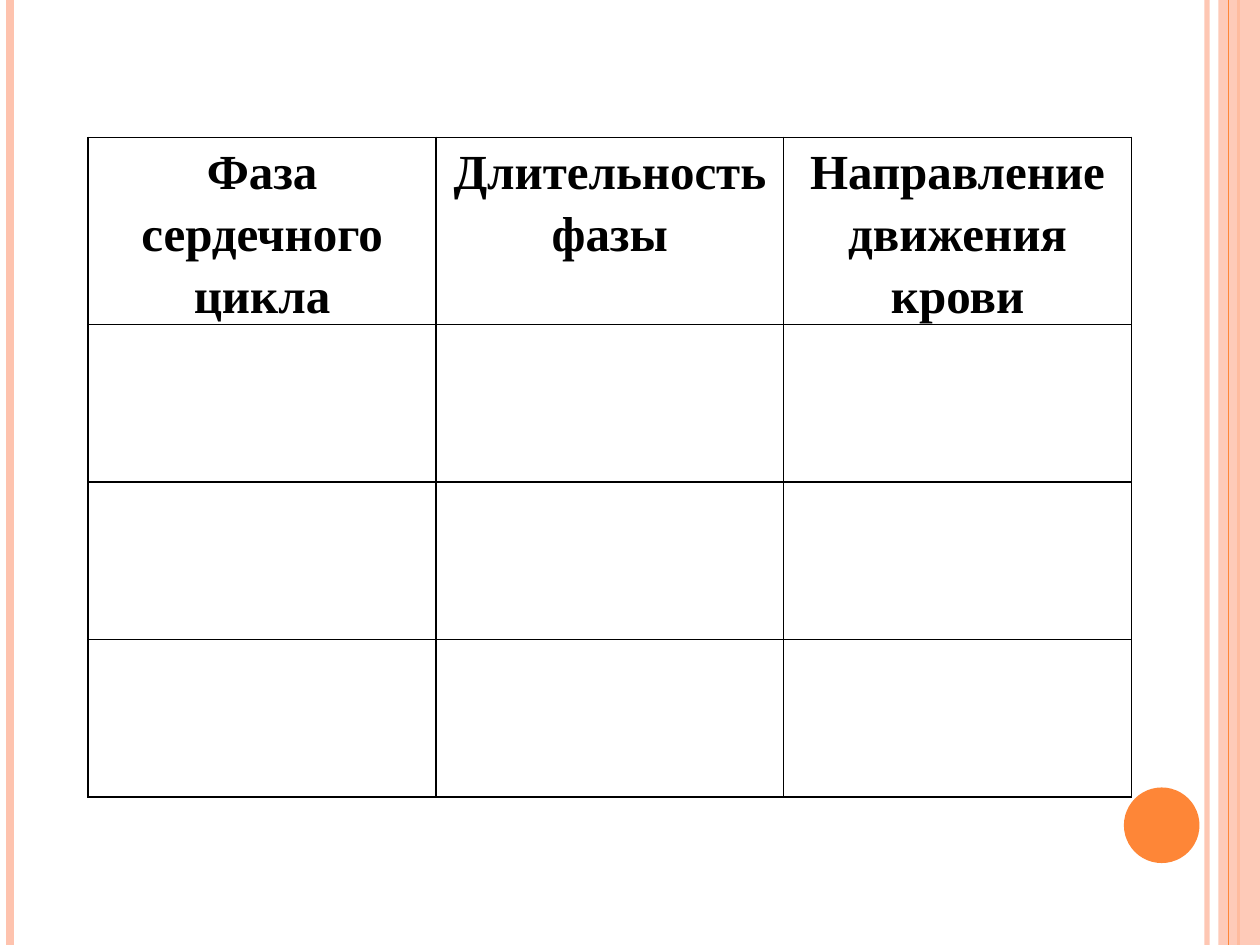
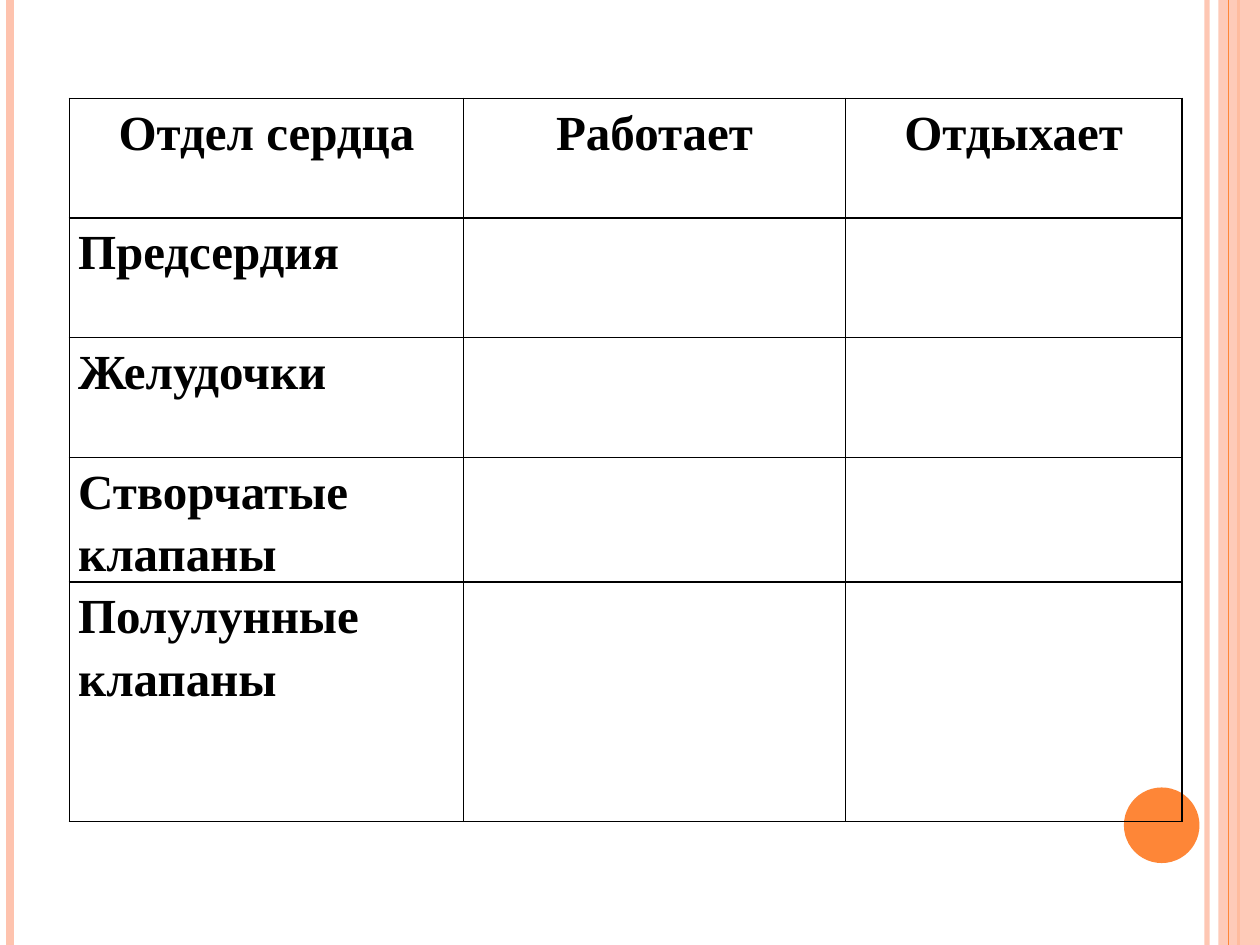
from dataclasses import dataclass

from lxml.etree import SubElement as Sub
from pptx import Presentation
from pptx.dml.color import RGBColor as RGB
from pptx.enum.shapes import MSO_CONNECTOR as Link, MSO_SHAPE as Kind
from pptx.enum.text import PP_ALIGN as Align
from pptx.oxml import parse_xml
from pptx.oxml.ns import nsdecls, qn
from pptx.util import Inches, Pt


@dataclass(frozen=True)
class Theme:
    peach: str = "FEC3AE"
    orange: str = "FE8637"
    ink: str = "000000"
    paper: str = "FFFFFF"
    face: str = "Times New Roman"
    size: int = 28
    space: float = 1.15
    rule: int = 1
    inset: float = 0.07


THEME = Theme()
PAGE = (0, 0, 10, 7.5)


def apply(item, style):
    for name, value in style.items():
        setattr(item, name, value)


def fade(part, alpha):
    """Set the opacity, in percent, of the colour inside part."""
    tint = next(part.iter(qn("a:srgbClr")))
    Sub(tint, qn("a:alpha"), val=str(alpha * 1000))


def stripe(slide, box, gap, color, width, alpha=100):
    """Upright line, gap inches from the left of the box."""
    left, top, _, high = box
    x = Inches(left + gap)
    line = slide.shapes.add_connector(
        Link.STRAIGHT, x, Inches(top), x, Inches(top + high))
    line.line.color.rgb = RGB.from_string(color)
    line.line.width = Pt(width)
    if alpha < 100:
        fade(line.line._ln, alpha)
    Sub(line._element.spPr, qn("a:effectLst"))


def solid(slide, kind, box, color, alpha=100):
    shape = slide.shapes.add_shape(kind, *map(Inches, box))
    shape.shadow.inherit = False
    shape.fill.solid()
    shape.fill.fore_color.rgb = RGB.from_string(color)
    shape.line.fill.background()
    if alpha < 100:
        fade(shape._element.spPr, alpha)


def frame(slide, box):
    """Side stripes, right band and round badge."""
    left, top, wide, high = box
    right, base = left + wide, top + high
    stripe(slide, box, wide - 0.42, THEME.peach, 3, 93)
    stripe(slide, box, 0.08, THEME.peach, 4.5)
    stripe(slide, box, wide - 0.17, THEME.orange, 1.5)
    solid(slide, Kind.RECTANGLE, (right - 0.33, top, 0.33, high),
          THEME.peach, 87)
    stripe(slide, box, wide - 0.25, THEME.orange, 0.75)
    solid(slide, Kind.OVAL, (right - 1.08, base - 1.25, 0.6, 0.6),
          THEME.orange)


def border(cell):
    """Thin line on all four sides of the cell."""
    props = cell._tc.get_or_add_tcPr()
    for spot, side in enumerate("LRTB"):
        props.insert(spot, parse_xml(
            f'<a:ln{side} {nsdecls("a")} w="{Pt(THEME.rule)}">'
            f'<a:solidFill><a:srgbClr val="{THEME.ink}"/></a:solidFill>'
            f'</a:ln{side}>'))


def write(cell, text, align):
    cell.text = text
    for para in cell.text_frame.paragraphs:
        apply(para, {"alignment": align, "line_spacing": THEME.space})
        for run in para.runs:
            apply(run.font, {"name": THEME.face, "size": Pt(THEME.size),
                             "bold": True})
            run.font.color.rgb = RGB.from_string(THEME.ink)


def grid(slide, spot, cols, rows, heads, names=()):
    """Ruled table with centred heads and row names on the left."""
    size = sum(cols), sum(rows)
    table = slide.shapes.add_table(
        len(rows), len(cols), *map(Inches, (*spot, *size))).table
    apply(table, {"first_row": False, "horz_banding": False})
    for col, wide in zip(table.columns, cols):
        col.width = Inches(wide)
    for row, high in zip(table.rows, rows):
        row.height = Inches(high)
    side = Inches(THEME.inset)
    for cell in table.iter_cells():
        apply(cell, {"margin_left": side, "margin_right": side,
                     "margin_top": 0, "margin_bottom": 0})
        cell.fill.background()
        border(cell)
    for col, head in enumerate(heads):
        write(table.cell(0, col), head, Align.CENTER)
    for row, name in enumerate(names, 1):
        write(table.cell(row, 0), name, Align.LEFT)


def sheet(deck, *parts):
    """Framed slide that holds one table."""
    slide = deck.slides.add_slide(deck.slide_layouts[6])
    back = slide.background.fill
    back.solid()
    back.fore_color.rgb = RGB.from_string(THEME.paper)
    frame(slide, PAGE)
    grid(slide, *parts)


def main():
    deck = Presentation()
    apply(deck, {"slide_width": Inches(PAGE[2]),
                 "slide_height": Inches(PAGE[3])})
    # Phases of the heart cycle
    sheet(deck, (0.7, 1.09), [2.76] * 3, [1.25] * 4,
          ["Фаза сердечного цикла", "Длительность фазы",
           "Направление движения крови"])
    # Work and rest of the heart parts
    sheet(deck, (0.55, 0.78), [3.13, 3.03, 2.67], [0.95] * 4 + [1.9],
          ["Отдел сердца", "Работает", "Отдыхает"],
          ["Предсердия", "Желудочки", "Створчатые клапаны",
           "Полулунные\nклапаны"])
    deck.save("out.pptx")


if __name__ == "__main__":
    main()
